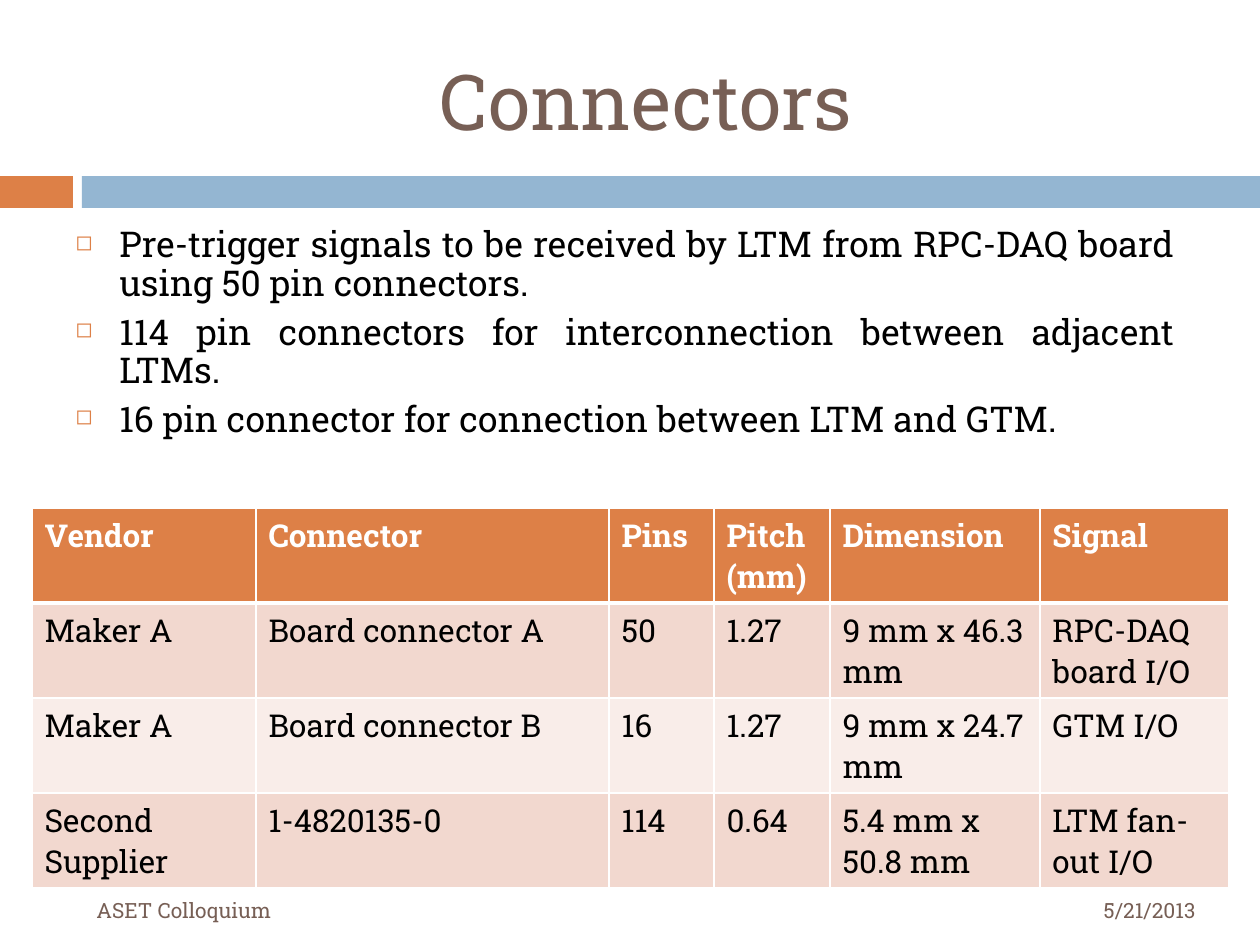
import pptx
import pptx.dml.color
import pptx.enum.shapes
import pptx.enum.text
import pptx.oxml
import pptx.oxml.ns
import pptx.util

PX = 914400 / 126
FONT = "Roboto Slab"
ORANGE, BLUE, BROWN = "DD8047", "94B6D2", "775F55"
WHITE, BLACK = "FFFFFF", "000000"
BANDS = ["F2D8CF", "F9EDE9"]
ALIGN = pptx.enum.text.PP_ALIGN
ANCHOR = pptx.enum.text.MSO_ANCHOR

BULLETS = [
    "Pre-trigger signals to be received by LTM from RPC-DAQ board using 50 pin connectors.",
    "114 pin connectors for interconnection between adjacent LTMs.",
    "16 pin connector for connection between LTM and GTM.",
]
COLUMN_WIDTHS = [224, 353, 105, 116, 210, 189]
ROW_HEIGHT = 95
ROWS = [
    ["Vendor", "Connector", "Pins", "Pitch (mm)", "Dimension", "Signal"],
    ["Maker A", "Board connector A", "50", "1.27", "9 mm x 46.3 mm", "RPC-DAQ board I/O"],
    ["Maker A", "Board connector B", "16", "1.27", "9 mm x 24.7 mm", "GTM I/O"],
    ["Second Supplier", "1-4820135-0", "114", "0.64", "5.4 mm x 50.8 mm", "LTM fan-out I/O"],
]


def px(length):
    return pptx.util.Emu(round(length * PX))


def color(value):
    return pptx.dml.color.RGBColor.from_string(value)


def write(para, text, size=18, fill=BLACK, bold=False, align=ALIGN.LEFT):
    para.alignment = align
    span = para.add_run()
    span.text = text
    span.font.name = FONT
    span.font.size = pptx.util.Pt(size)
    span.font.bold = bold
    span.font.color.rgb = color(fill)


def add_bar(page, left, top, width, height, fill):
    bar = page.shapes.add_shape(pptx.enum.shapes.MSO_SHAPE.RECTANGLE,
                                px(left), px(top), px(width), px(height))
    bar.shadow.inherit = False
    bar.fill.solid()
    bar.fill.fore_color.rgb = color(fill)
    bar.line.fill.background()


def add_box(page, left, top, width, height, anchor=ANCHOR.MIDDLE):
    box = page.shapes.add_textbox(px(left), px(top), px(width), px(height))
    frame = box.text_frame
    frame.word_wrap = True
    frame.vertical_anchor = anchor
    return frame


def add_bullet(para):
    props = para._p.get_or_add_pPr()
    props.set("marL", str(px(44)))
    props.set("indent", str(-px(44)))
    namespace = pptx.oxml.ns.nsdecls("a")
    for markup in (
        f'<a:buClr {namespace}><a:srgbClr val="{ORANGE}"/></a:buClr>',
        f'<a:buSzPct {namespace} val="60000"/>',
        f'<a:buChar {namespace} char="◻"/>',
    ):
        props.append(pptx.oxml.parse_xml(markup))


def add_bullets(page, items, left, top, width, height):
    frame = add_box(page, left, top, width, height, ANCHOR.TOP)
    for number, item in enumerate(items):
        para = frame.add_paragraph() if number else frame.paragraphs[0]
        para.line_spacing = 0.9
        para.space_after = pptx.util.Pt(6)
        write(para, item, size=20.3, align=ALIGN.JUSTIFY)
        add_bullet(para)


def set_borders(cell, widths):
    props = cell._tc.get_or_add_tcPr()
    for position, (side, width) in enumerate(widths.items()):
        props.insert(position, pptx.oxml.parse_xml(
            f'<a:{side} {pptx.oxml.ns.nsdecls("a")} w="{pptx.util.Pt(width)}">'
            f'<a:solidFill><a:srgbClr val="{WHITE}"/></a:solidFill></a:{side}>'))


def add_grid(page, rows, left, top):
    table = page.shapes.add_table(len(rows), len(COLUMN_WIDTHS), px(left), px(top),
                                  px(sum(COLUMN_WIDTHS)), px(ROW_HEIGHT * len(rows))).table
    for column, width in zip(table.columns, COLUMN_WIDTHS):
        column.width = px(width)
    for r, values in enumerate(rows):
        header = r == 0
        for c, value in enumerate(values):
            cell = table.cell(r, c)
            cell.fill.solid()
            cell.fill.fore_color.rgb = color(ORANGE if header else BANDS[(r - 1) % 2])
            set_borders(cell, {"lnL": 1, "lnR": 1, "lnT": 3 if r == 1 else 1,
                               "lnB": 3 if header else 1})
            write(cell.text_frame.paragraphs[0], value,
                  fill=WHITE if header else BLACK, bold=header)


def main():
    deck = pptx.Presentation()
    deck.slide_width, deck.slide_height = px(1260), px(945)
    page = deck.slides.add_slide(deck.slide_layouts[6])

    # Divider bars
    add_bar(page, 0, 176, 73, 32, ORANGE)
    add_bar(page, 82, 176, 1178, 32, BLUE)

    # Title
    title = add_box(page, 84, 32, 1124, 136)
    write(title.paragraphs[0], "Connectors", size=44, fill=BROWN, align=ALIGN.CENTER)

    # Body and connector table
    add_bullets(page, BULLETS, 63, 221, 1124, 262)
    add_grid(page, ROWS, 32, 508)

    # Footer
    footer = add_box(page, 84, 885, 747, 50)
    write(footer.paragraphs[0], "ASET Colloquium", size=12, fill=BROWN)
    date = add_box(page, 840, 885, 368, 50)
    write(date.paragraphs[0], "5/21/2013", size=12, fill=BROWN, align=ALIGN.RIGHT)

    deck.save("out.pptx")


if __name__ == "__main__":
    main()
